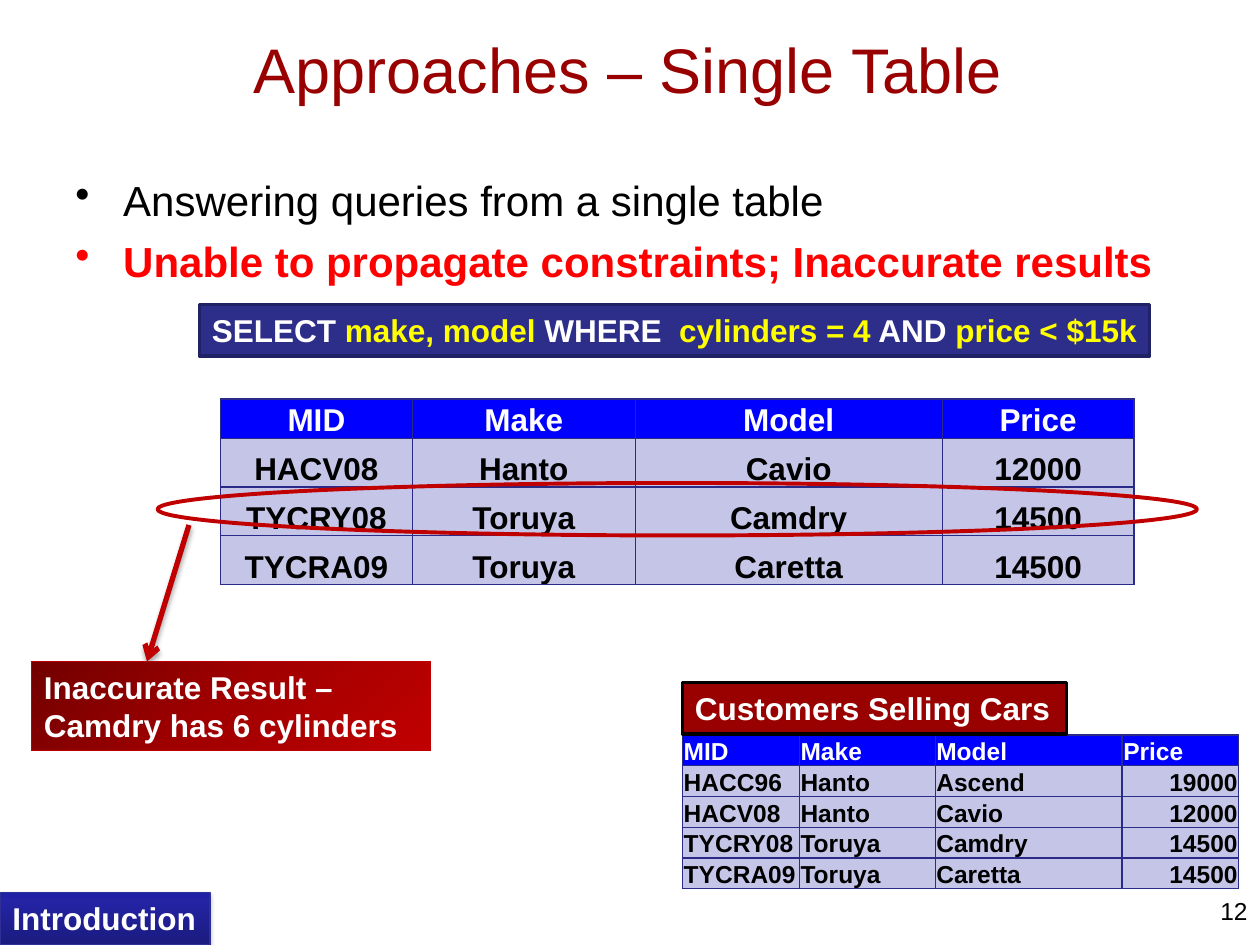
from copy import deepcopy

from lxml.etree import SubElement
from pptx import Presentation
from pptx.dml.color import RGBColor
from pptx.enum.shapes import MSO_CONNECTOR, MSO_SHAPE
from pptx.enum.text import MSO_ANCHOR, PP_ALIGN
from pptx.oxml.ns import qn
from pptx.util import Inches, Pt

WIDTH, HEIGHT = Inches(10), Inches(7.5)
COLUMN, ROW = WIDTH / 120, HEIGHT / 90
FONT = "Arial"
COLORS = {
    "title": "990000", "black": "000000", "white": "FFFFFF", "alert": "FF0000",
    "yellow": "FFFF00", "query": "2D2D8A", "query_edge": "212166",
    "header": "0000FF", "cell": "C5C5E8", "border": "2A2A89",
    "mark": "C00000", "tag_edge": "2F2F98",
}
RED_STOPS = [(0, "720000"), (50, "A20000"), (100, "C00000")]
BLUE_STOPS = [(0, "1B1B7E"), (80, "2323A3"), (100, "2020A6")]
COLUMN_SHARES = [0.21, 0.244, 0.336, 0.21]
HEADINGS = ["MID", "Make", "Model", "Price"]
ACCORD = ["HACC96", "Hanto", "Ascend", "19000"]
RESULTS = [
    ["HACV08", "Hanto", "Cavio", "12000"],
    ["TYCRY08", "Toruya", "Camdry", "14500"],
    ["TYCRA09", "Toruya", "Caretta", "14500"],
]


def color(name):
    return RGBColor.from_string(COLORS[name])


def place(box):
    """Turn a box in grid columns and rows into slide lengths."""
    left, top, width, height = box
    return [int(left * COLUMN), int(top * ROW), int(width * COLUMN), int(height * ROW)]


def style(para, size, name, bold=False):
    for span in para.runs:
        span.font.name, span.font.size, span.font.bold = FONT, Pt(size), bold
        span.font.color.rgb = color(name)


def add_text(page, box, text, size, name, align=PP_ALIGN.LEFT, anchor=MSO_ANCHOR.TOP):
    frame = page.shapes.add_textbox(*place(box)).text_frame
    frame.word_wrap, frame.vertical_anchor = True, anchor
    frame.text = text
    for para in frame.paragraphs:
        para.alignment = align
        style(para, size, name)
    return frame


def add_bullets(page, box, items):
    """Add one bulleted line for each (text, colour, bold) item."""
    frame = add_text(page, box, "\n".join(item[0] for item in items), 24, "black")
    for index, (para, (_, name, bold)) in enumerate(zip(frame.paragraphs, items)):
        properties = para._p.get_or_add_pPr()
        properties.set("marL", str(Inches(0.38)))
        properties.set("indent", str(-Inches(0.38)))
        SubElement(properties, qn("a:buChar"), char="•")
        if index:
            para.space_before = Pt(6)
        style(para, 24, name, bold)


def add_shape(page, kind, box, line, width, fill=None):
    shape = page.shapes.add_shape(kind, *place(box))
    shape.shadow.inherit = False
    shape.line.color.rgb, shape.line.width = color(line), Pt(width)
    if fill:
        shape.fill.solid()
        shape.fill.fore_color.rgb = color(fill)
    else:
        shape.fill.background()
    return shape


def add_label(page, box, text, line, width, fill, wrap):
    shape = add_shape(page, MSO_SHAPE.RECTANGLE, box, line, width, fill)
    frame = shape.text_frame
    frame.text, frame.word_wrap = text, wrap
    frame.vertical_anchor = MSO_ANCHOR.TOP
    frame.paragraphs[0].alignment = PP_ALIGN.LEFT
    style(frame.paragraphs[0], 18, "white", True)
    return shape


def add_query(page, box, parts):
    """Add the query with its arguments, every second part, in yellow."""
    label = add_label(page, box, "", "query_edge", 2, "query", False)
    para = label.text_frame.paragraphs[0]
    for part in parts:
        para.add_run().text = part
    style(para, 18, "white", True)
    for span in para.runs[1::2]:
        span.font.color.rgb = color("yellow")


def set_gradient(shape, stops, angle):
    shape.fill.gradient()
    shape.fill.gradient_angle = angle
    stop_list = shape._element.spPr.find(".//" + qn("a:gsLst"))
    stop_list.clear()
    for position, value in stops:
        stop = SubElement(stop_list, qn("a:gs"), pos=str(position * 1000))
        SubElement(stop, qn("a:srgbClr"), val=value)


def set_shadow(shape):
    properties = shape._element.spPr
    effects = properties.find(qn("a:effectLst"))
    if effects is None:
        effects = SubElement(properties, qn("a:effectLst"))
    shadow = SubElement(effects, qn("a:outerShdw"), blurRad=str(Pt(3.1)),
                        dist=str(Pt(1.8)), dir="5400000", rotWithShape="0")
    tint = SubElement(shadow, qn("a:srgbClr"), val=COLORS["black"])
    SubElement(tint, qn("a:alpha"), val="35000")


def add_arrow(page, start, end):
    left, top, right, bottom = place((*start, *end))
    arrow = page.shapes.add_connector(MSO_CONNECTOR.STRAIGHT, left, top, right, bottom)
    arrow.line.color.rgb, arrow.line.width = color("mark"), Pt(3)
    SubElement(arrow.line._get_or_add_ln(), qn("a:tailEnd"), type="arrow")
    set_shadow(arrow)


def set_borders(cell, model):
    """Draw all four cell borders, copying the first one made."""
    properties = cell._tc.get_or_add_tcPr()
    if not model:
        side = SubElement(properties, qn("a:lnL"), w=str(Pt(0.75)))
        SubElement(SubElement(side, qn("a:solidFill")), qn("a:srgbClr"), val=COLORS["border"])
        model.append(side)
    for index, name in enumerate(["a:lnL", "a:lnR", "a:lnT", "a:lnB"]):
        side = deepcopy(model[0])
        side.tag = qn(name)
        properties.insert(index, side)


def add_car_table(page, box, records, size, row_heights, aligns):
    rows = [HEADINGS, *records]
    table = page.shapes.add_table(len(rows), len(HEADINGS), *place(box)).table
    table.first_row = table.horz_banding = False
    for column, share in zip(table.columns, COLUMN_SHARES):
        column.width = int(box[2] * COLUMN * share)
    for row, height in zip(table.rows, row_heights):
        row.height = int(height * ROW)
    model = []
    for r, record in enumerate(rows):
        for c, text in enumerate(record):
            cell = table.cell(r, c)
            cell.text, cell.vertical_anchor = text, MSO_ANCHOR.BOTTOM
            cell.margin_left = cell.margin_right = cell.margin_top = Inches(0.01)
            cell.margin_bottom = 0
            cell.fill.solid()
            cell.fill.fore_color.rgb = color("cell" if r else "header")
            para = cell.text_frame.paragraphs[0]
            para.alignment = aligns[c] if r else aligns[0]
            style(para, size, "black" if r else "white", True)
            if not model:
                set_borders(cell, model)
                cell._tc.tcPr.remove(model[0])
            else:
                set_borders(cell, model)


def build_single_table(page):
    left, center, right = PP_ALIGN.LEFT, PP_ALIGN.CENTER, PP_ALIGN.RIGHT
    add_text(page, (23, -1, 96, 15), "Approaches – Single Table", 36, "title",
             anchor=MSO_ANCHOR.MIDDLE)
    add_bullets(page, (6, 16, 108, 16), [
        ("Answering queries from a single table", "black", False),
        ("Unable to propagate constraints; Inaccurate results", "alert", True)])
    add_text(page, (92, 84.75, 28, 5.25), "12", 14, "black", align=right)
    add_query(page, (19, 29, 90.5, 4.9), [
        "SELECT ", "make, model ", "WHERE  ", "cylinders = 4", " AND ", "price < $15k"])
    add_car_table(page, (65, 70, 53, 14.65), [ACCORD, *RESULTS], 14,
                  [2.93] * 5, [left, left, left, right])
    add_car_table(page, (21, 38, 87, 17.7), RESULTS, 18,
                  [3.72] + [4.66] * 3, [center] * 4)
    add_label(page, (65, 65, 36.6, 4.9), "Customers Selling Cars", "black", 2, "title", False)
    add_shape(page, MSO_SHAPE.OVAL, (15, 46, 99, 5), "mark", 2.25)
    add_arrow(page, (18, 50), (14, 63))
    callout = add_label(page, (3, 63, 38, 8.5), "Inaccurate Result – Camdry has 6 cylinders",
                        "mark", 0.75, "mark", True)
    set_gradient(callout, RED_STOPS, 315)
    section = add_label(page, (0, 85, 20, 5), "Introduction", "tag_edge", 0.75, "query", True)
    set_gradient(section, BLUE_STOPS, 90)
    set_shadow(section)


def main():
    deck = Presentation()
    deck.slide_width, deck.slide_height = WIDTH, HEIGHT
    build_single_table(deck.slides.add_slide(deck.slide_layouts[6]))
    deck.save("out.pptx")


if __name__ == "__main__":
    main()
